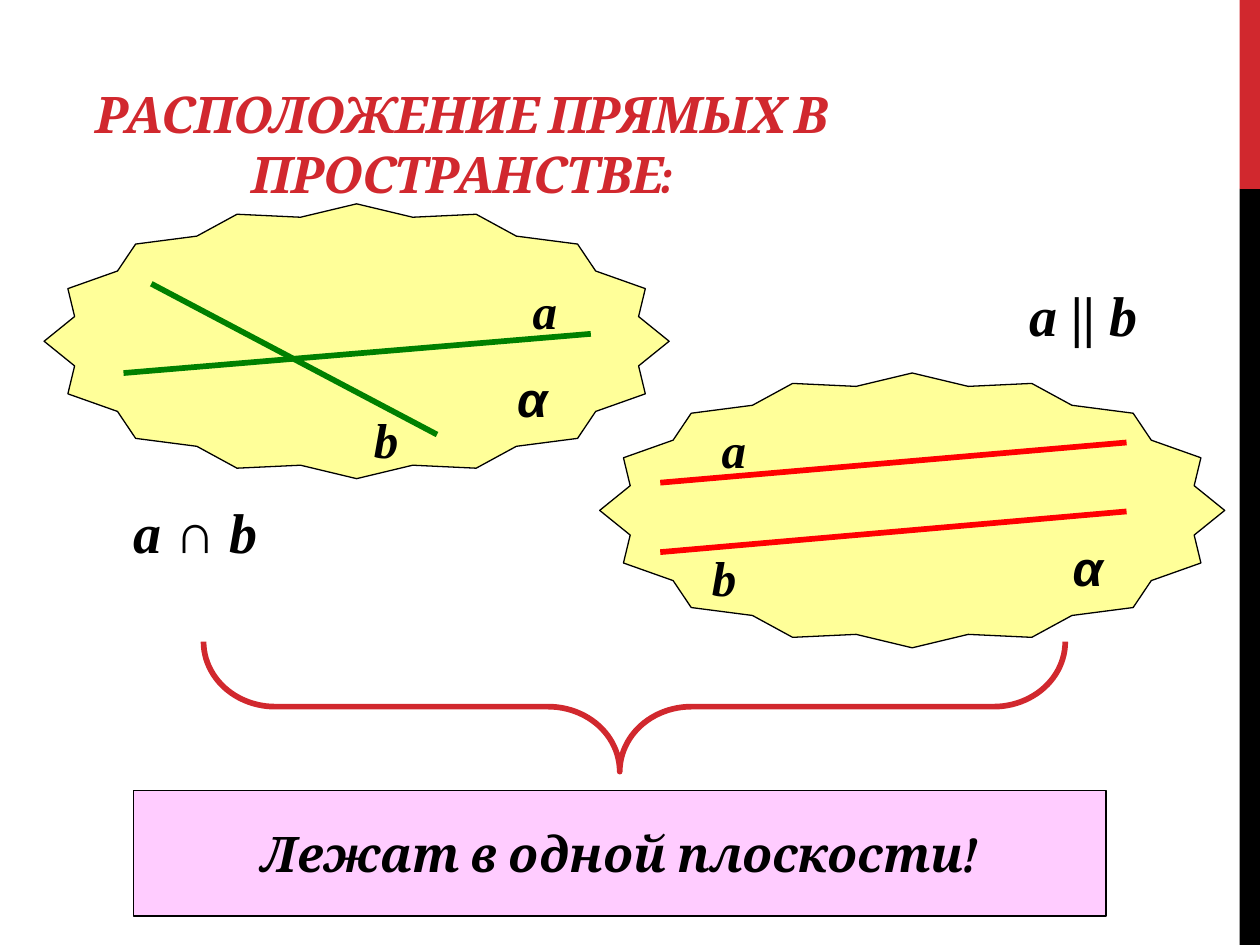
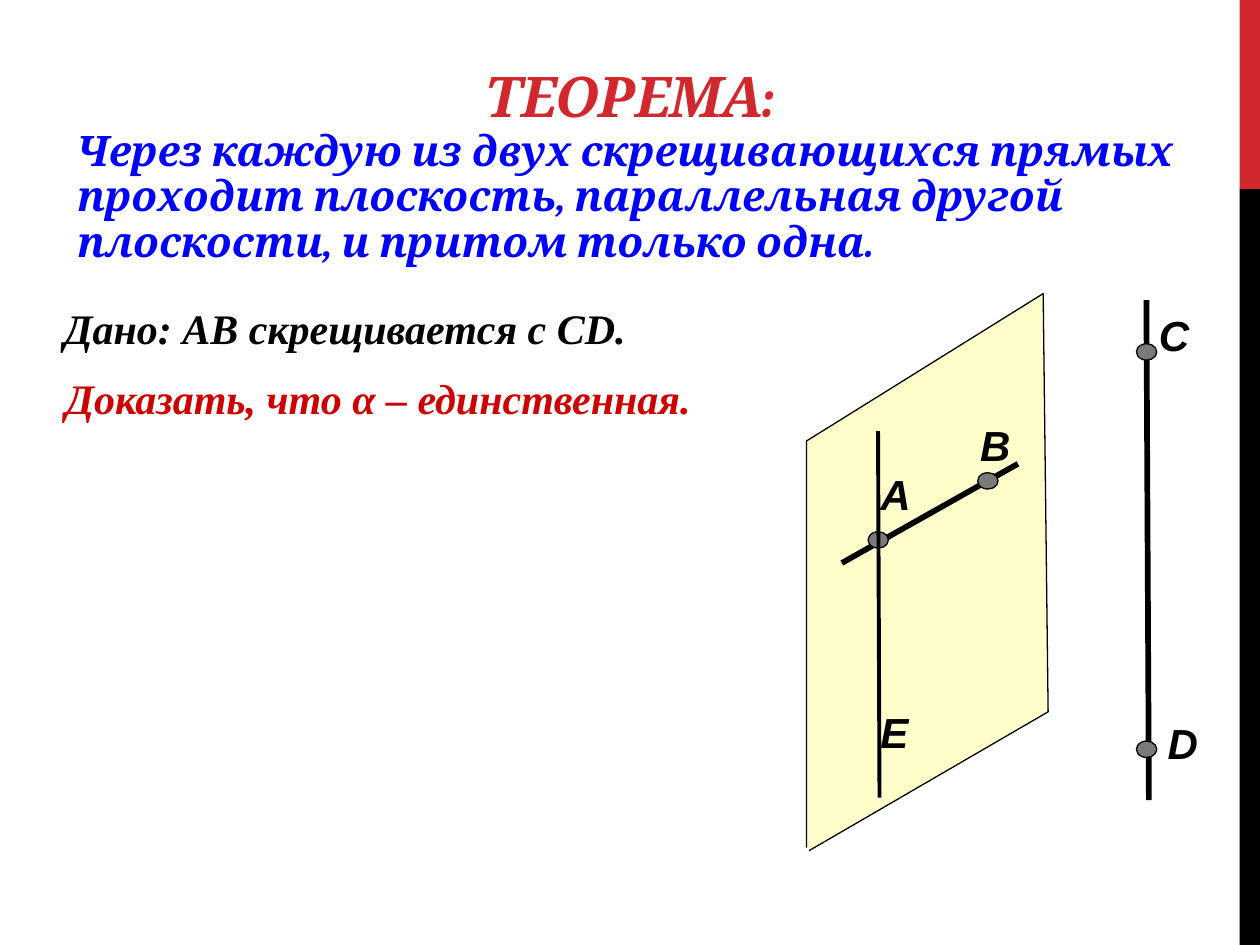
import dataclasses

import pptx
import pptx.dml.color
import pptx.enum.shapes
import pptx.enum.text
import pptx.oxml
import pptx.oxml.ns
import pptx.util

Cm, Pt = pptx.util.Cm, pptx.util.Pt
PRESET = pptx.enum.shapes.MSO_SHAPE
ALIGN = pptx.enum.text.PP_ALIGN
ANCHOR = pptx.enum.text.MSO_ANCHOR
FIT = pptx.enum.text.MSO_AUTO_SIZE
qn = pptx.oxml.ns.qn


@dataclasses.dataclass(frozen=True)
class Theme:
    accent: str = "D1282E"
    ink: str = "000000"
    star: str = "FFFF99"
    plane: str = "FFFFCC"
    conclusion: str = "FFCCFF"
    point: str = "7A7A7A"
    crossing: str = "008000"
    parallel: str = "FF0000"
    theorem: str = "0000FF"
    proof: str = "CC0000"
    heading_font: str = "Cambria"
    formula_font: str = "Times New Roman"
    label_font: str = "Arial"
    long_title: float = 28.8
    large: float = 32
    medium: float = 28
    small: float = 24
    thin: float = 0.75
    middling: float = 2.25
    thick: float = 3.25


THEME = Theme()

# All places are left, top, width, height in centimetres.
BANDS = [((24.99, 0, 0.41, 3.81), THEME.accent),
         ((24.99, 3.81, 0.41, 15.24), THEME.ink)]

POSITIONS = {
    "title": "РАСПОЛОЖЕНИЕ ПРЯМЫХ В ПРОСТРАНСТВЕ:",
    "title_place": (1.27, 0.43, 16.08, 3.81),
    "plane_name": "α",
    "star_corners": [(12.09, 7.52), (0.89, 4.11)],
    "star_size": (12.6, 5.54),
    "lines": [
        ((2.49, 7.52), (11.91, 6.73), THEME.crossing),
        ((3.05, 5.72), (8.81, 8.76), THEME.crossing),
        ((13.31, 9.73), (22.71, 8.92), THEME.parallel),
        ((13.31, 11.13), (22.71, 10.31), THEME.parallel),
    ],
    "line_names": [("a", 10.49, 5.54), ("b", 7.29, 8.13),
                   ("a", 14.3, 8.33), ("b", 14.1, 10.92)],
    "name_size": (1.02, 1.45),
    "formulas": [("a ∩ b", (2.44, 9.91, 3.02, 1.6)),
                 ("a || b", (20.5, 5.54, 2.9, 1.6))],
    "brace_place": (11.48, 5.56, 2.62, 17.37),
    "conclusion": "Лежат в одной плоскости!",
    "conclusion_place": (2.69, 15.93, 19.61, 2.54),
}

THEOREM = {
    "title": "ТЕОРЕМА:",
    "title_place": (1.27, 0.76, 22.86, 1.96),
    "statement": "Через каждую из двух скрещивающихся прямых проходит "
                 "плоскость, параллельная другой плоскости, и притом "
                 "только одна.",
    "statement_place": (1.3, 2.5, 22.86, 3.2),
    "proof": [
        ("Дано: АВ скрещивается с СD.", (1.04, 5.97, 12.17, 1.3), THEME.ink),
        ("Доказать, что α – единственная.", (1.07, 7.39, 13.18, 1.27),
         THEME.proof),
    ],
    "plane": [(16.26, 17.09), (16.26, 8.89), (21.03, 5.92),
              (21.13, 14.35), (16.31, 17.15)],
    "skew_lines": [((16.97, 11.35), (20.52, 9.35)),
                   ((23.16, 16.13), (23.11, 6.05))],
    "parallel_line": ((17.73, 16.08), (17.7, 8.69)),
    "points": [(17.5, 10.72), (19.71, 9.53), (22.91, 6.93), (22.91, 14.94)],
    "point_size": (0.41, 0.33),
    "point_names": [("А", 17.5, 9.32), ("В", 19.51, 8.33), ("C", 23.11, 6.12),
                    ("D", 23.29, 14.33), ("Е", 17.5, 14.12)],
    "name_size": (1.12, 1.27),
}


def lengths(values):
    return [Cm(value) for value in values]


def rgb(colour):
    return pptx.dml.color.RGBColor.from_string(colour)


def write_text(shape, text, font=THEME.heading_font, size=THEME.medium,
               colour=THEME.ink, align=ALIGN.LEFT, anchor=ANCHOR.TOP,
               wrap=True, fit=FIT.NONE, line_spacing=None, tracking=None):
    frame = shape.text_frame
    frame.word_wrap = wrap
    frame.auto_size = fit
    frame.vertical_anchor = anchor
    paragraph = frame.paragraphs[0]
    paragraph.alignment = align
    if line_spacing:
        paragraph.line_spacing = line_spacing
        paragraph.space_before = paragraph.space_after = Pt(0)
    run = paragraph.add_run()
    run.text = text
    run.font.name = font
    run.font.size = Pt(size)
    run.font.bold = run.font.italic = True
    run.font.color.rgb = rgb(colour)
    if tracking:
        for properties in shape.element.iter(qn("a:rPr")):
            properties.set("spc", str(round(tracking * 100)))


def paint(shape, fill=None, line=None, width=THEME.thin):
    shape.shadow.inherit = False
    if fill:
        shape.fill.solid()
        shape.fill.fore_color.rgb = rgb(fill)
    else:
        shape.fill.background()
    if line:
        shape.line.color.rgb = rgb(line)
        shape.line.width = Pt(width)
    else:
        shape.line.fill.background()
    return shape


def add_preset(slide, preset, place, **look):
    return paint(slide.shapes.add_shape(preset, *lengths(place)), **look)


def add_line(slide, start, end, colour=THEME.ink, width=THEME.thick):
    line = slide.shapes.add_connector(
        pptx.enum.shapes.MSO_CONNECTOR.STRAIGHT, *lengths(start + end))
    line.line.color.rgb = rgb(colour)
    line.line.width = Pt(width)
    properties = line.element.find(qn("p:spPr"))
    properties.append(pptx.oxml.parse_xml(
        f"<a:effectLst {pptx.oxml.ns.nsdecls('a')}/>"))


def add_label(slide, text, place, **text_format):
    box = slide.shapes.add_textbox(*lengths(place))
    write_text(box, text, wrap=False, fit=FIT.SHAPE_TO_FIT_TEXT, **text_format)


def move(shape, place):
    shape.left, shape.top, shape.width, shape.height = lengths(place)


def add_title(slide, content, size):
    title = slide.shapes.title
    move(title, content["title_place"])
    write_text(title, content["title"], size=size, colour=THEME.accent,
               align=ALIGN.CENTER, anchor=ANCHOR.BOTTOM, line_spacing=1.0,
               tracking=-0.6)


def add_bands_to_master(slide):
    """Draw the side bands and hand them to the master for every slide."""
    master_tree = slide.slide_layout.slide_master.shapes.element
    for place, colour in BANDS:
        band = add_preset(slide, PRESET.RECTANGLE, place, fill=colour)
        master_tree.insert(2, band.element)


def build_positions(slide):
    content = POSITIONS
    add_title(slide, content, THEME.long_title)
    for corner in content["star_corners"]:
        star = add_preset(slide, PRESET.STAR_16_POINT,
                          corner + content["star_size"],
                          fill=THEME.star, line=THEME.ink)
        star.adjustments[0] = 0.46
        star.text_frame.margin_top = Cm(2.4)
        write_text(star, content["plane_name"], font=THEME.label_font,
                   align=ALIGN.RIGHT, anchor=ANCHOR.MIDDLE)
    for start, end, colour in content["lines"]:
        add_line(slide, start, end, colour)
    for name, left, top in content["line_names"]:
        add_label(slide, name, (left, top) + content["name_size"],
                  font=THEME.formula_font)
    for formula, place in content["formulas"]:
        add_label(slide, formula, place, font=THEME.formula_font,
                  size=THEME.large)
    brace = add_preset(slide, PRESET.LEFT_BRACE, content["brace_place"],
                       line=THEME.accent, width=THEME.thick)
    brace.rotation = 270
    brace.adjustments[0], brace.adjustments[1] = 0.551, 0.483
    conclusion = add_preset(slide, PRESET.RECTANGLE,
                            content["conclusion_place"],
                            fill=THEME.conclusion, line=THEME.ink)
    write_text(conclusion, content["conclusion"], align=ALIGN.CENTER,
               anchor=ANCHOR.MIDDLE)


def add_statement(slide, content):
    statement = slide.placeholders[1]
    move(statement, content["statement_place"])
    write_text(statement, content["statement"], size=THEME.small,
               colour=THEME.theorem, line_spacing=0.9)
    for properties in statement.element.iter(qn("a:pPr")):
        properties.set("marL", "0")
        properties.set("indent", "0")
        properties.append(pptx.oxml.parse_xml(
            f"<a:buNone {pptx.oxml.ns.nsdecls('a')}/>"))


def build_theorem(slide):
    content = THEOREM
    add_title(slide, content, THEME.large)
    add_statement(slide, content)
    for text, place, colour in content["proof"]:
        add_label(slide, text, place, font=THEME.formula_font,
                  size=THEME.small, colour=colour)
    first, *others = [lengths(corner) for corner in content["plane"]]
    outline = slide.shapes.build_freeform(*first)
    outline.add_line_segments(others, close=False)
    paint(outline.convert_to_shape(), fill=THEME.plane, line=THEME.ink)
    for start, end in content["skew_lines"]:
        add_line(slide, start, end)
    for corner in content["points"]:
        add_preset(slide, PRESET.OVAL, corner + content["point_size"],
                   fill=THEME.point, line=THEME.ink)
    add_line(slide, *content["parallel_line"], width=THEME.middling)
    for name, left, top in content["point_names"]:
        add_label(slide, name, (left, top) + content["name_size"],
                  font=THEME.label_font, size=THEME.small)


def main():
    deck = pptx.Presentation()
    deck.slide_width, deck.slide_height = Cm(25.4), Cm(19.05)
    body_layout, title_layout = deck.slide_layouts[1], deck.slide_layouts[5]
    positions = deck.slides.add_slide(title_layout)
    add_bands_to_master(positions)
    build_positions(positions)
    build_theorem(deck.slides.add_slide(body_layout))
    deck.save("out.pptx")


if __name__ == "__main__":
    main()
